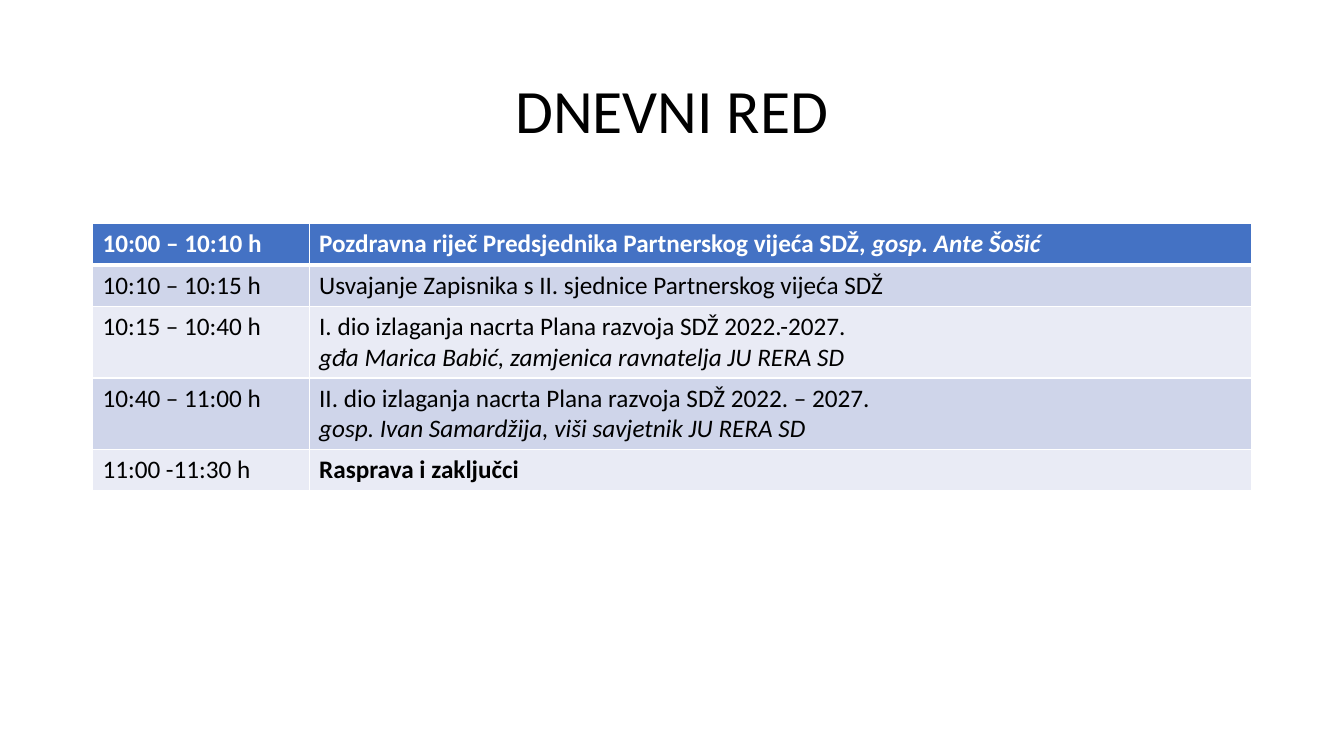
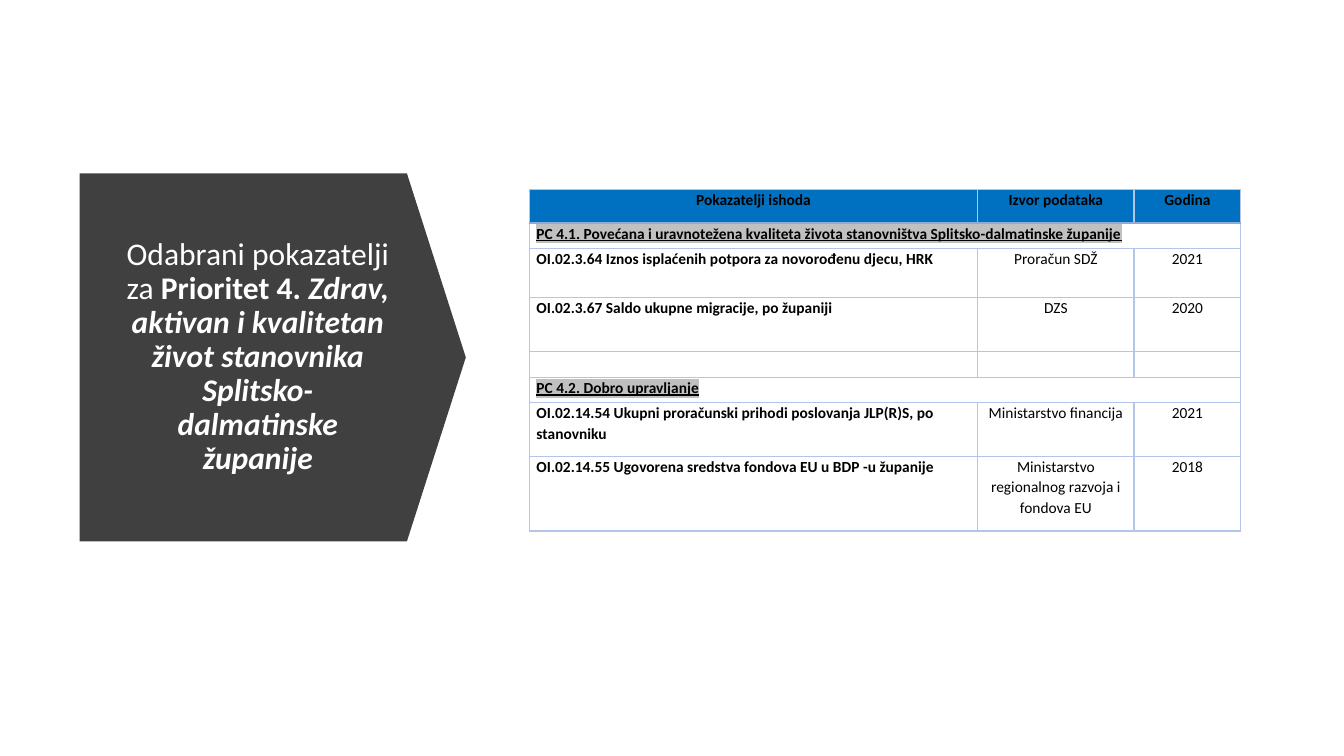
import pptx
import pptx.util
import pptx.dml.color
import pptx.enum.shapes
import pptx.enum.text
import pptx.oxml.ns
from dataclasses import dataclass, field
from typing import Any
from lxml import etree

Cm = pptx.util.Cm
Pt = pptx.util.Pt
qn = pptx.oxml.ns.qn
ALIGN = pptx.enum.text.PP_ALIGN
FACE = "Calibri"
HUES = {
    "black": "000000",
    "white": "FFFFFF",
    "blue": "4472C4",
    "pale": "CFD5EA",
    "light": "E9EBF5",
    "dark": "404040",
    "azure": "0070C0",
    "line": "B4C6E7",
    "rule": "8EAADB",
    "mark": "C0C0C0",
}
BOLD = {"bold": True}
SLANT = {"italic": True}
HEAVY = {"bold": True, "italic": True}
UNDER = {"bold": True, "underline": True}


@dataclass
class Run:
    text: str
    style: dict[str, Any] = field(default_factory=dict)
    mark: str = ""


@dataclass
class Cell:
    lines: list[list[Run]]
    form: dict[str, Any] = field(default_factory=dict)


@dataclass
class Row:
    high: float
    fill: str
    cells: list[Cell]
    ink: str = "black"


@dataclass
class Grid:
    left: float
    top: float
    wide: list[float]
    rows: list[Row]
    size: float
    edge: str
    rule: tuple[str, float]
    form: dict[str, Any] = field(default_factory=dict)
    inset: dict[str, Any] = field(default_factory=dict)


def tint(name: str) -> pptx.dml.color.RGBColor:
    return pptx.dml.color.RGBColor.from_string(HUES[name])


def apply(item: Any, form: dict[str, Any]) -> None:
    for key, value in form.items():
        setattr(item, key, value)


def add_hue(node: Any, tag: str, name: str) -> Any:
    part = etree.SubElement(node, qn(tag))
    etree.SubElement(part, qn("a:srgbClr"), val=HUES[name])
    return part


def write(frame: Any, lines: list[list[Run]], size: float, ink: str, form: dict[str, Any]) -> None:
    for index, line in enumerate(lines):
        para = frame.add_paragraph() if index else frame.paragraphs[0]
        apply(para, form)
        for part in line:
            run = para.add_run()
            run.text = part.text
            apply(run.font, {"name": FACE, "size": Pt(size), **part.style})
            run.font.color.rgb = tint(ink)
            if part.mark:
                props = run._r.get_or_add_rPr()
                glow = add_hue(props, "a:highlight", part.mark)
                props.find(qn("a:solidFill")).addnext(glow)
        if not line:
            etree.SubElement(para._p, qn("a:endParaRPr"), sz=str(size * 100))


def add_title(slide: Any, box: tuple[float, ...], runs: list[Run], size: float, ink: str) -> Any:
    title = slide.shapes.title
    apply(title, dict(zip(("left", "top", "width", "height"), map(Cm, box))))
    apply(title.text_frame, {
        "word_wrap": True,
        "auto_size": pptx.enum.text.MSO_AUTO_SIZE.NONE,
        "vertical_anchor": pptx.enum.text.MSO_ANCHOR.MIDDLE,
    })
    write(title.text_frame, [runs], size, ink, {"alignment": ALIGN.CENTER, "line_spacing": 0.9})
    return title


def add_edge(cell: Any, side: str, name: str, width: float) -> None:
    props = cell._tc.get_or_add_tcPr()
    line = etree.SubElement(props, qn(f"a:ln{side}"), w=str(Pt(width)))
    add_hue(line, "a:solidFill", name)


def add_grid(slide: Any, grid: Grid) -> None:
    count = len(grid.wide)
    high = sum(row.high for row in grid.rows)
    table = slide.shapes.add_table(
        len(grid.rows), count, Cm(grid.left), Cm(grid.top), Cm(sum(grid.wide)), Cm(high)
    ).table
    apply(table, {"first_row": False, "horz_banding": False})
    for col, wide in zip(table.columns, grid.wide):
        col.width = Cm(wide)
    for y, row in enumerate(grid.rows):
        table.rows[y].height = Cm(row.high)
        if len(row.cells) < count:
            table.cell(y, 0).merge(table.cell(y, count - 1))
        for x in range(count):
            cell = table.cell(y, x)
            data = row.cells[x] if x < len(row.cells) else Cell([[]])
            apply(cell, grid.inset)
            for side in "LRTB":
                ruled = (y, side) in ((0, "B"), (1, "T"))
                add_edge(cell, side, *(grid.rule if ruled else (grid.edge, 1)))
            cell.fill.solid()
            cell.fill.fore_color.rgb = tint(row.fill)
            write(cell.text_frame, data.lines, grid.size, row.ink, {**grid.form, **data.form})


def plan(high: float, fill: str, time: str, *lines: list[Run]) -> Row:
    return Row(high, fill, [Cell([[Run(time)]]), Cell(list(lines))])


def center(text: str, style: dict[str, Any]) -> Cell:
    return Cell([[Run(text, style)] if text else []], {"alignment": ALIGN.CENTER})


def topic(high: float, text: str) -> Row:
    return Row(high, "white", [Cell([[Run(text, UNDER, "mark")]])])


def entry(high: float, name: str, source: str, year: str) -> Row:
    label = Cell([[Run(name, BOLD)] if name else []])
    return Row(high, "white", [label, center(source, {}), center(year, {})])


def agenda(slide: Any) -> None:
    add_title(slide, (2.33, 1.02, 29.21, 3.68), [Run("DNEVNI RED")], 44, "black")
    head = Row(1.04, "blue", [
        Cell([[Run("10:00 – 10:10 h", BOLD)]]),
        Cell([[Run("Pozdravna riječ Predsjednika Partnerskog vijeća SDŽ, ", BOLD),
               Run("gosp. Ante Šošić", HEAVY)]]),
    ], "white")
    rows = [
        head,
        plan(1.04, "pale", "10:10 – 10:15 h",
             [Run("Usvajanje Zapisnika s II. sjednice Partnerskog vijeća SDŽ")]),
        plan(1.79, "light", "10:15 – 10:40 h",
             [Run("I. dio izlaganja nacrta Plana razvoja SDŽ 2022.-2027.")],
             [Run("gđa Marica Babić, zamjenica ravnatelja JU RERA SD", SLANT)]),
        plan(1.79, "pale", "10:40 – 11:00 h",
             [Run("II. dio izlaganja nacrta Plana razvoja SDŽ 2022. – 2027.")],
             [Run("gosp. Ivan Samardžija, viši savjetnik JU RERA SD", SLANT)]),
        plan(1.04, "light", "11:00 -11:30 h", [Run("Rasprava i zaključci", BOLD)]),
    ]
    add_grid(slide, Grid(2.33, 5.64, [5.46, 23.75], rows, 18, "white", ("white", 3)))


def goals(slide: Any) -> None:
    title = add_title(slide, (2.84, 5.46, 7.32, 7.09), [
        Run("Odabrani pokazatelji za "),
        Run("Prioritet 4. ", BOLD),
        Run("Zdrav, aktivan i kvalitetan život stanovnika Splitsko-dalmatinske županije", HEAVY),
    ], 22.5, "white")
    arrow = slide.shapes.add_shape(
        pptx.enum.shapes.MSO_SHAPE.DOWN_ARROW, Cm(2.24), Cm(4.14), Cm(9.27), Cm(9.73)
    )
    arrow.rotation = 270
    arrow.adjustments[0] = 1
    arrow.adjustments[1] = 0.16
    arrow.shadow.inherit = False
    arrow.fill.solid()
    arrow.fill.fore_color.rgb = tint("dark")
    arrow.line.fill.background()
    title.element.addprevious(arrow.element)
    heads = ("Pokazatelji ishoda", "Izvor podataka", "Godina")
    rows = [
        Row(0.84, "azure", [center(text, BOLD) for text in heads]),
        topic(0.64, "PC 4.1. Povećana i uravnotežena kvaliteta života stanovništva "
                    "Splitsko-dalmatinske županije"),
        entry(1.24, "OI.02.3.64 Iznos isplaćenih potpora za novorođenu djecu, HRK",
              "Proračun SDŽ", "2021"),
        entry(1.35, "OI.02.3.67 Saldo ukupne migracije, po županiji", "DZS", "2020"),
        entry(0.66, "", "", ""),
        topic(0.64, "PC 4.2. Dobro upravljanje"),
        entry(1.35, "OI.02.14.54 Ukupni proračunski prihodi poslovanja JLP(R)S, po stanovniku",
              "Ministarstvo financija", "2021"),
        entry(1.88, "OI.02.14.55 Ugovorena sredstva fondova EU u BDP -u županije",
              "Ministarstvo regionalnog razvoja i fondova EU", "2018"),
    ]
    form = {"line_spacing": 1.07, "space_after": Pt(8)}
    inset = {"margin_left": Cm(0.18), "margin_right": Cm(0.18),
             "margin_top": Cm(0), "margin_bottom": Cm(0)}
    add_grid(slide, Grid(13.34, 4.78, [11.3, 3.94, 2.69], rows, 11, "line",
                         ("rule", 1.5), form, inset))


def main() -> None:
    deck = pptx.Presentation()
    apply(deck, {"slide_width": Cm(33.87), "slide_height": Cm(19.05)})
    for build in (agenda, goals):
        build(deck.slides.add_slide(deck.slide_layouts[5]))
    deck.save("out.pptx")


if __name__ == "__main__":
    main()
